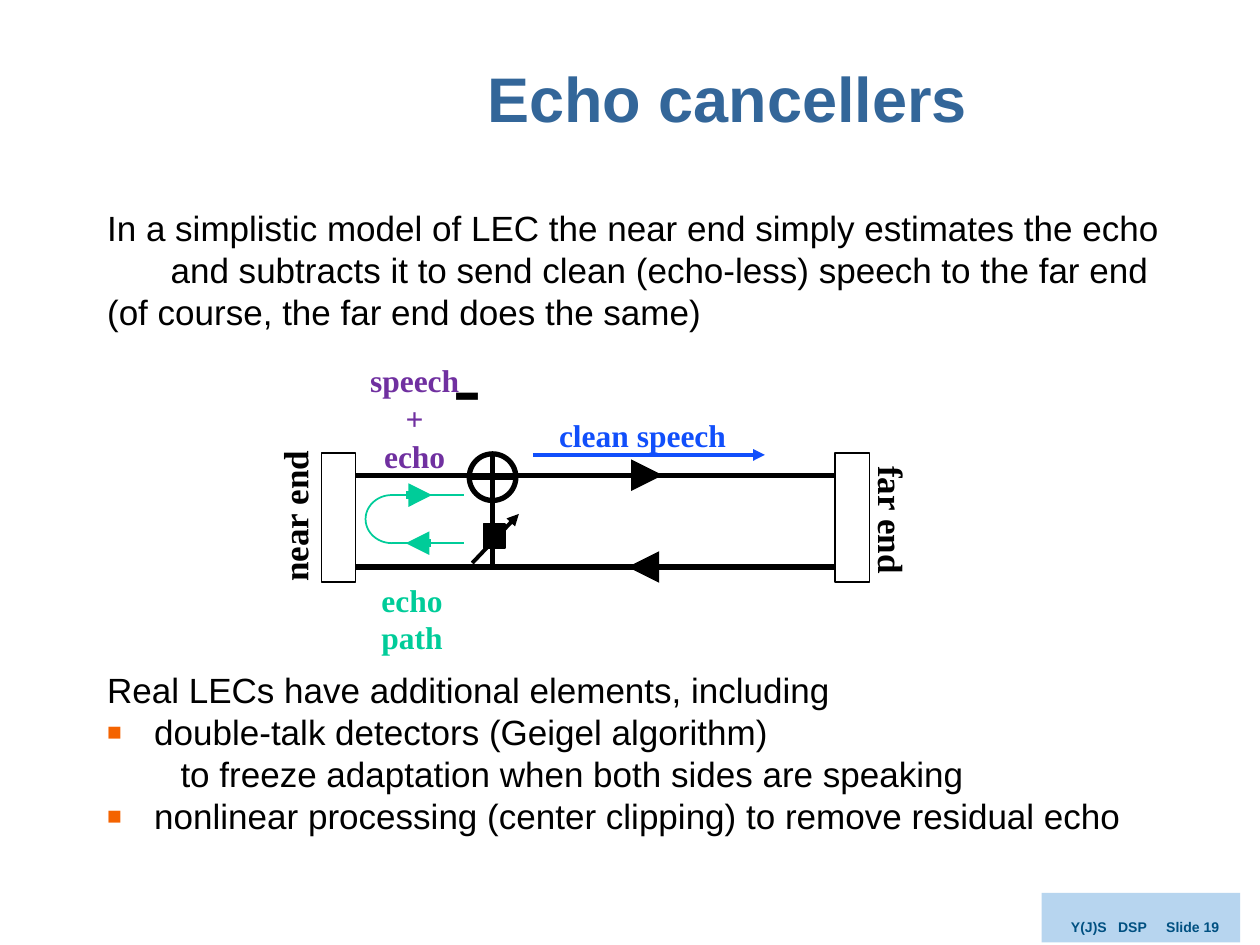
from lxml import etree
from pptx import Presentation
from pptx import util as u
from pptx.dml import color
from pptx.enum import shapes, text
from pptx.oxml import ns

BLACK, PURPLE, GREEN, BLUE = "000000", "7030A0", "00CC99", "114FFB"
SANS, SERIF = "Arial", "Times New Roman"


def rgb(hex_code):
    return color.RGBColor.from_string(hex_code)


def add_xml(parent, tag, **attributes):
    return etree.SubElement(parent, ns.qn(tag), attributes)


class Sketch:
    """Draws on one slide; all lengths are centimetres."""

    def __init__(self, slide):
        self.slide = slide

    def label(self, lines, box, size, hue=BLACK, font=SERIF, bold=True,
              align=None, rotation=0, wrap=True, anchor=text.MSO_ANCHOR.TOP):
        holder = self.slide.shapes.add_textbox(*map(u.Cm, box))
        holder.rotation = rotation
        frame = holder.text_frame
        frame.word_wrap = wrap
        frame.vertical_anchor = anchor
        frame.text = "\n".join(lines)
        for paragraph in frame.paragraphs:
            paragraph.alignment = align
            paragraph.font.name = font
            paragraph.font.size = u.Pt(size)
            paragraph.font.bold = bold
            paragraph.font.color.rgb = rgb(hue)
        return frame.paragraphs

    def indent(self, paragraph, left, first=0, bullet=None):
        props = paragraph._p.get_or_add_pPr()
        props.set("marL", str(u.Cm(left)))
        props.set("indent", str(u.Cm(first)))
        if bullet:
            add_xml(add_xml(props, "a:buClr"), "a:srgbClr", val="F46300")
            add_xml(props, "a:buSzPct", val="70000")
            add_xml(props, "a:buFont", typeface=SANS)
            add_xml(props, "a:buChar", char=bullet)

    def tabs(self, paragraph, stops):
        tab_list = add_xml(paragraph._p.get_or_add_pPr(), "a:tabLst")
        for stop in stops:
            add_xml(tab_list, "a:tab", pos=str(u.Cm(stop)), algn="l")

    def line(self, start, end, width, hue=BLACK, arrow=False):
        link = self.slide.shapes.add_connector(
            shapes.MSO_CONNECTOR.STRAIGHT, *map(u.Cm, (*start, *end)))
        link.line.color.rgb = rgb(hue)
        link.line.width = u.Pt(width)
        if arrow:
            add_xml(link.line._get_or_add_ln(), "a:tailEnd", type="triangle")
        add_xml(link._element.spPr, "a:effectLst")

    def shape(self, kind, box, width, hue=BLACK, fill=None, angles=()):
        figure = self.slide.shapes.add_shape(kind, *map(u.Cm, box))
        for i, angle in enumerate(angles):
            figure.adjustments[i] = angle * 0.6  # 60000 units per degree
        figure.line.color.rgb = rgb(hue)
        figure.line.width = u.Pt(width)
        self.finish(figure, fill)

    def outline(self, points, fill):
        builder = self.slide.shapes.build_freeform(*points[0], scale=u.Cm(1))
        builder.add_line_segments(points[1:], close=True)
        figure = builder.convert_to_shape()
        figure.line.fill.background()
        self.finish(figure, fill)

    def finish(self, figure, fill):
        figure.shadow.inherit = False
        if fill:
            figure.fill.solid()
            figure.fill.fore_color.rgb = rgb(fill)
        else:
            figure.fill.background()


def main():
    deck = Presentation()
    deck.slide_width, deck.slide_height = u.Cm(25.4), u.Cm(19.05)
    sketch = Sketch(deck.slides.add_slide(deck.slide_layouts[6]))
    center = text.PP_ALIGN.CENTER
    preset = shapes.MSO_SHAPE

    # Footer
    sketch.outline([(25.4, 18.26), (25.4, 19.05), (21.31, 19.05),
                    (21.31, 18.54), (21.39, 18.42), (21.49, 18.34),
                    (21.62, 18.29), (21.72, 18.26)], "B7D5EF")
    footer = sketch.label(["Y(J)S\tDSP\tSlide 19"], (21.34, 18.39, 4.06, 0.66),
                          8, "005081", SANS)
    sketch.tabs(footer[0], (0.95, 1.92))

    # Title
    title = sketch.label(["Echo cancellers"], (5.38, 0.46, 18.57, 3.18), 36,
                         "336699", SANS, align=center,
                         anchor=text.MSO_ANCHOR.MIDDLE)
    title[0].line_spacing = 0.9

    # Body, with room for the diagram before the second part
    body = sketch.label([
        "In a simplistic model of LEC the near end simply estimates the echo",
        "and subtracts it to send clean (echo-less) speech to the far end",
        "(of course, the far end does the same)",
        "Real LECs have additional elements, including",
        "double-talk detectors (Geigel algorithm)",
        "to freeze adaptation when both sides are speaking",
        "nonlinear processing (center clipping) to remove residual echo",
    ], (1.91, 4.04, 22.05, 7.26), 20, font=SANS, bold=False)
    _, subtracts, _, real_lecs, double_talk, freeze, nonlinear = body
    for paragraph in body:
        paragraph.line_spacing = u.Pt(24)
    real_lecs.space_before = u.Pt(192)
    sketch.indent(subtracts, 1.28)
    sketch.indent(freeze, 1.48)
    for item in (double_talk, nonlinear):
        sketch.indent(item, 0.95, -0.95, "■")

    # The two ends and the wires between them
    near_x, far_x, end_width = 6.48, 16.84, 0.69
    send_y, return_y = 9.58, 11.43
    for wire_y in (send_y, return_y):
        sketch.line((near_x + end_width, wire_y), (far_x, wire_y), 3)
    for end_x in (near_x, far_x):
        sketch.shape(preset.RECTANGLE, (end_x, 9.14, end_width, 2.6), 1)
    sketch.line((12.88, send_y), (13.36, send_y), 6, arrow=True)
    sketch.line((13.03, return_y), (12.65, return_y), 6, arrow=True)
    sketch.label(["near end"], (3.96, 9.86, 3.94, 1.09), 20, align=center,
                 rotation=270)
    sketch.label(["far end"], (16.46, 10.13, 3.05, 1.09), 20, rotation=90)

    # Subtractor
    sum_x, sum_y, radius = 9.93, 9.62, 0.47
    sketch.shape(preset.OVAL, (sum_x - radius, sum_y - radius,
                               2 * radius, 2 * radius), 3)
    sketch.line((sum_x - radius, sum_y), (sum_x + radius, sum_y), 3)
    sketch.line((sum_x, sum_y + radius), (sum_x, sum_y - radius), 3)
    sketch.label(["-"], (8.89, 6.58, 0.97, 2.29), 48)

    # Adaptive filter
    sketch.line((sum_x, sum_y + radius), (sum_x, return_y), 3)
    sketch.shape(preset.RECTANGLE, (9.75, 10.57, 0.43, 0.48), 1, fill=BLACK)
    sketch.line((9.52, 11.35), (10.46, 10.36), 2.25, arrow=True)

    # Echo path
    echo_top, echo_bottom, bend_x = 9.98, 10.95, 7.9
    sketch.shape(preset.ARC, (7.37, echo_top, 1.06, echo_bottom - echo_top),
                 1, GREEN, angles=(90, 270))
    for echo_y in (echo_top, echo_bottom):
        sketch.line((9.35, echo_y), (bend_x, echo_y), 1, GREEN)
    sketch.line((8.69, echo_bottom), (8.18, echo_bottom), 4.5, GREEN, True)
    sketch.line((8.18, echo_top), (8.71, echo_top), 4.5, GREEN, True)
    sketch.label(["echo path"], (7.44, 11.58, 3.02, 1.02), 18, GREEN)

    # Signals
    sketch.line((10.74, 9.17), (15.42, 9.17), 2.25, BLUE, True)
    sketch.label(["clean speech"], (11.02, 8.26, 4.17, 1.02), 18, BLUE)
    sketch.label(["speech", "+", "echo"], (7.19, 7.16, 2.34, 2.57), 18, PURPLE,
                 align=center, wrap=False)

    deck.save("out.pptx")


if __name__ == "__main__":
    main()
